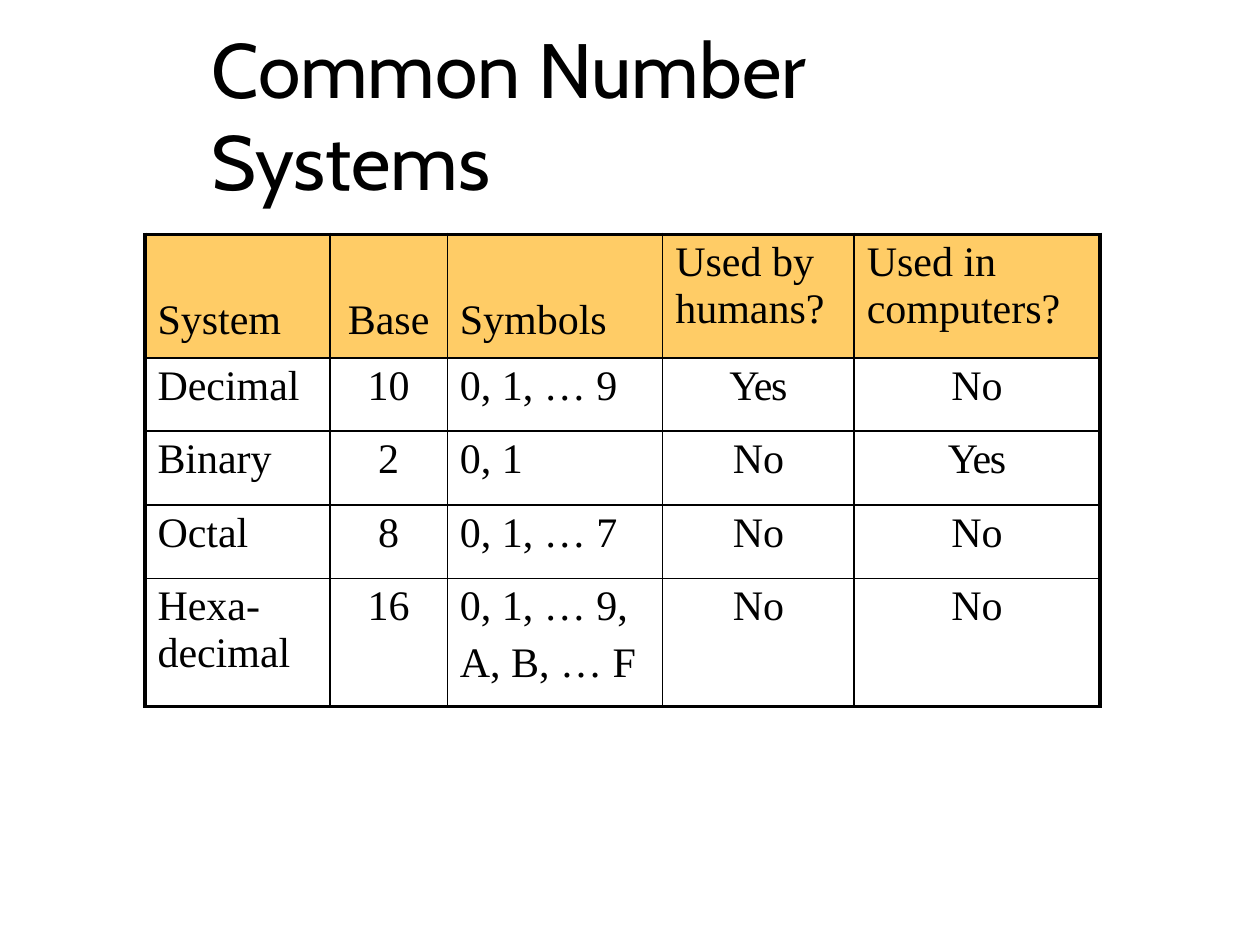
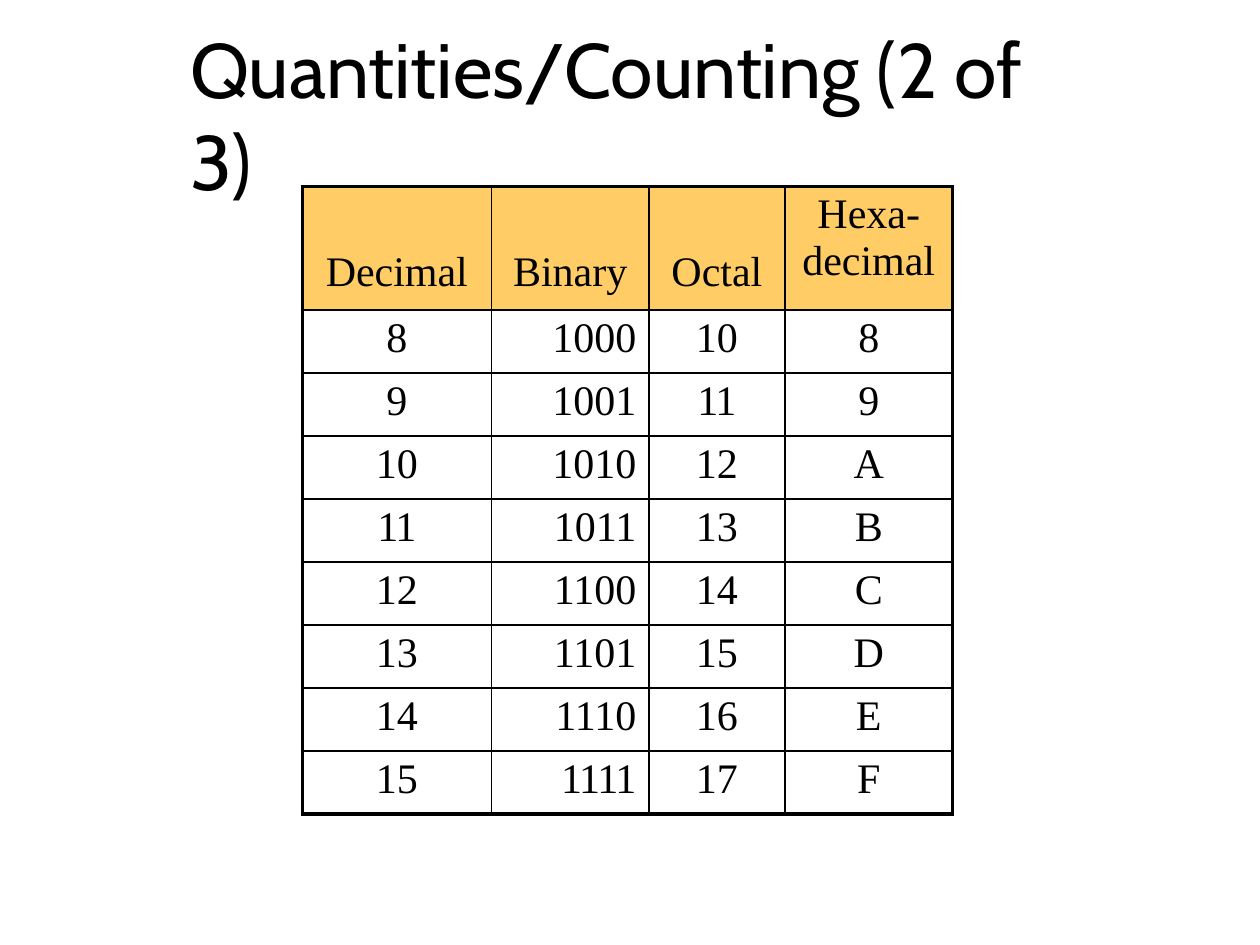
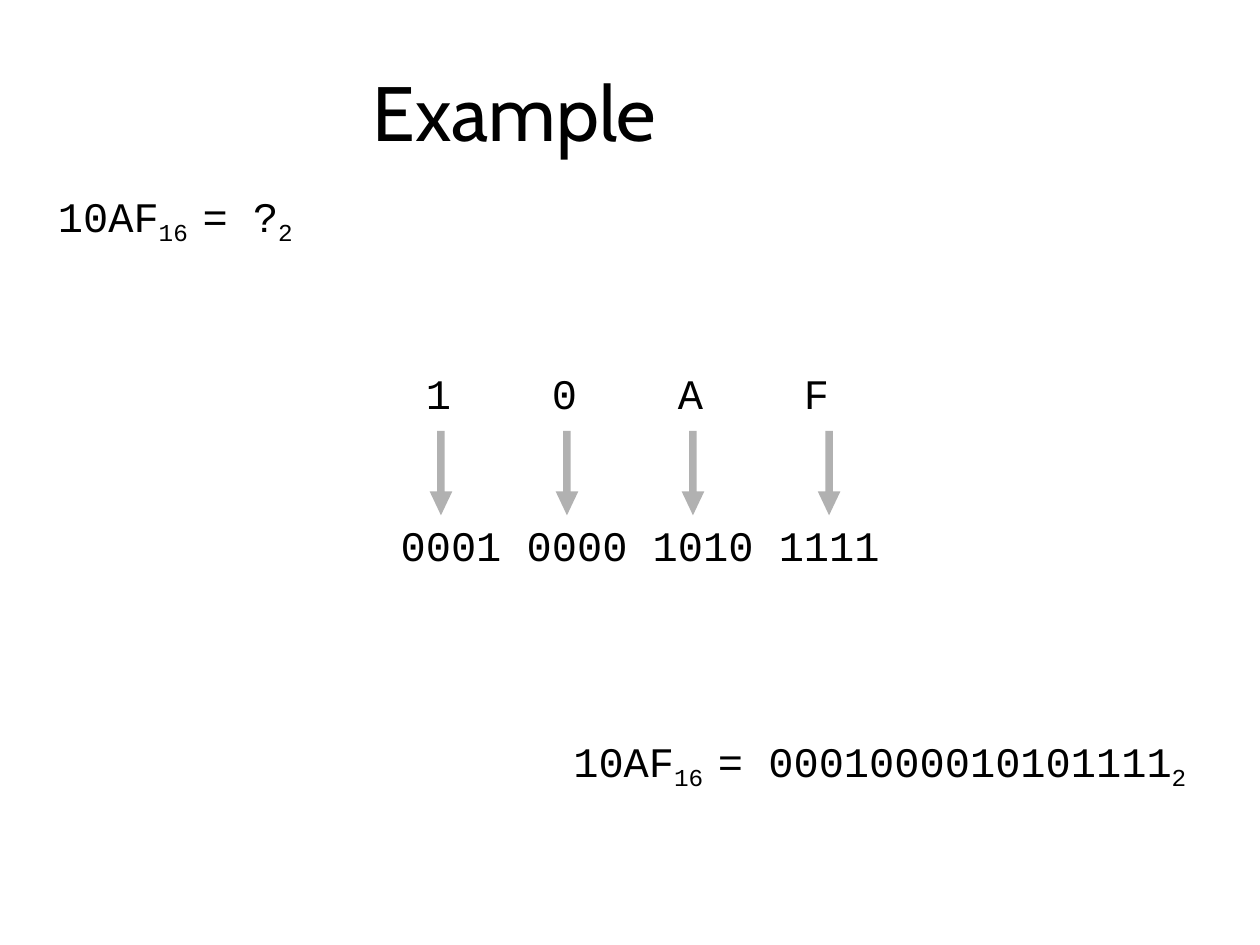
from dataclasses import dataclass

from lxml.etree import SubElement
from pptx import Presentation
from pptx.dml.color import RGBColor
from pptx.enum.text import MSO_ANCHOR, MSO_AUTO_SIZE, PP_ALIGN
from pptx.oxml.ns import qn
from pptx.util import Emu, Pt

PX = 9144  # EMU per px, 100 px to the inch


@dataclass(frozen=True)
class Theme:
    ink: str = "000000"
    header_fill: str = "FFCC66"
    arrow_fill: str = "B1B1B1"
    title_font: str = "Cabin"
    table_font: str = "Times New Roman"
    code_font: str = "Courier New"
    title_size: int = 44
    body_size: int = 24
    outer_border: float = 2.25
    inner_border: float = 1
    paragraph_gap: float = 5.8
    tight_spacing: float = -0.8


THEME = Theme()
ALIGNMENTS = {"l": PP_ALIGN.LEFT, "c": PP_ALIGN.CENTER, "r": PP_ALIGN.RIGHT}
TIGHT_WORDS = {"Yes", "11", "1111"}
CELL_SIDE, CELL_TOP, LOWERED_HEADING_TOP = 10, 4, 50

# Title: text, left, top, width
TABLE_SLIDES = [
    {
        "title": ("Common Number Systems", 167, 16, 665),
        "left": 115, "top": 186,
        "columns": [147, 93, 171, 152, 195],
        "row_heights": [98, 58, 59, 58, 102],
        "header_alignment": "lclll",
        "body_alignment": "lclcc",
        "rows": [
            ("System", "Base", "Symbols", "Used by humans?", "Used in computers?"),
            ("Decimal", "10", "0, 1, … 9", "Yes", "No"),
            ("Binary", "2", "0, 1", "No", "Yes"),
            ("Octal", "8", "0, 1, … 7", "No", "No"),
            ("Hexa- decimal", "16", "0, 1, … 9,\nA, B, … F", "No", "No"),
        ],
    },
    {
        "title": ("Quantities/Counting (2 of 3)", 150, 16, 701),
        "left": 240, "top": 148,
        "columns": [150, 125, 108, 133],
        "row_heights": [98] + [50] * 8,
        "header_alignment": "cccc",
        "body_alignment": "crcc",
        "rows": [("Decimal", "Binary", "Octal", "Hexa- decimal")]
        + [(str(n), f"{n:b}", f"{n:o}", f"{n:X}") for n in range(8, 16)],
    },
]

EXAMPLE_TITLE = ("Example", 295, 50, 307)
HEX_DIGITS = "10AF"
DIGIT_LEFT, DIGIT_STEP, DIGIT_TOP, DIGIT_WIDTH = 337, 100, 291, 23
ARROW_LEFTS, ARROW_TOP = [341, 441, 541, 649], 342
ARROW_OUTLINE = [(6, 0), (12, 0), (12, 48), (18, 48), (9, 67), (0, 48), (6, 48)]
BINARY_GROUPS = ("0001 0000 1010 1111", 317, 411, 383)
# Equation: runs as (text, is subscript), left, top, width
EQUATIONS = [
    ([("10AF", False), ("16 ", True), ("= ?", False), ("2", True)], 40, 150, 211),
    ([("10AF", False), ("16 ", True), ("= 0001000010101111", False), ("2", True)],
     449, 583, 511),
]


def px(length):
    return Emu(length * PX)


def style_run(run, font_name, size):
    run.font.name = font_name
    run.font.size = Pt(size)
    run.font.color.rgb = RGBColor.from_string(THEME.ink)


def set_margins(target, left=0, top=0, right=0):
    target.margin_left, target.margin_top = px(left), px(top)
    target.margin_right, target.margin_bottom = px(right), px(0)


def add_text(slide, runs, left, top, width, font_name=THEME.code_font,
             size=THEME.body_size, inset=1):
    """Add one paragraph made of (text, is subscript) runs."""
    height = 76 if size == THEME.title_size else 43
    text_frame = slide.shapes.add_textbox(px(left), px(top), px(width), px(height)).text_frame
    text_frame.word_wrap = True
    text_frame.auto_size = MSO_AUTO_SIZE.SHAPE_TO_FIT_TEXT
    set_margins(text_frame, left=inset, top=1)
    for text, is_subscript in runs:
        run = text_frame.paragraphs[0].add_run()
        run.text = text
        style_run(run, font_name, size)
        if is_subscript:
            run._r.get_or_add_rPr().set("baseline", "-21000")


def add_title(slide, text, left, top, width):
    add_text(slide, [(text, False)], left, top, width, THEME.title_font, THEME.title_size)


def set_borders(cell, outer_sides):
    properties = cell._tc.get_or_add_tcPr()
    for side in "LRTB":
        width = THEME.outer_border if side in outer_sides else THEME.inner_border
        line = SubElement(properties, qn(f"a:ln{side}"), w=str(Pt(width)))
        fill = SubElement(line, qn("a:solidFill"))
        SubElement(fill, qn("a:srgbClr"), val=THEME.ink)


def fill_cell(cell, text, alignment, is_header):
    is_lowered = is_header and " " not in text
    set_margins(
        cell,
        left=CELL_SIDE if alignment == "l" else 0,
        top=LOWERED_HEADING_TOP if is_lowered else CELL_TOP,
        right=CELL_SIDE if alignment == "r" else 0,
    )
    cell.vertical_anchor = MSO_ANCHOR.TOP
    if is_header:
        cell.fill.solid()
        cell.fill.fore_color.rgb = RGBColor.from_string(THEME.header_fill)
    else:
        cell.fill.background()
    cell.text_frame.text = text
    for index, paragraph in enumerate(cell.text_frame.paragraphs):
        paragraph.alignment = ALIGNMENTS[alignment]
        if index:
            paragraph.space_before = Pt(THEME.paragraph_gap)
        for run in paragraph.runs:
            style_run(run, THEME.table_font, THEME.body_size)
            if text in TIGHT_WORDS:
                run._r.get_or_add_rPr().set("spc", str(round(THEME.tight_spacing * 100)))


def add_number_table(slide, content):
    rows, columns, heights = content["rows"], content["columns"], content["row_heights"]
    table = slide.shapes.add_table(
        len(rows), len(columns), px(content["left"]), px(content["top"]),
        px(sum(columns)), px(sum(heights)),
    ).table
    table.first_row = table.horz_banding = False
    for column, width in zip(table.columns, columns):
        column.width = px(width)
    for row, height in zip(table.rows, heights):
        row.height = px(height)
    last_row, last_column = len(rows) - 1, len(columns) - 1
    for row_index, texts in enumerate(rows):
        is_header = row_index == 0
        alignments = content["header_alignment" if is_header else "body_alignment"]
        for column_index, (text, alignment) in enumerate(zip(texts, alignments)):
            edges = {"L": column_index == 0, "R": column_index == last_column,
                     "T": is_header, "B": row_index == last_row}
            cell = table.cell(row_index, column_index)
            set_borders(cell, [side for side, is_outer in edges.items() if is_outer])
            fill_cell(cell, text, alignment, is_header)


def add_down_arrow(slide, left, top):
    points = [(left + x, top + y) for x, y in ARROW_OUTLINE]
    builder = slide.shapes.build_freeform(*points[0], scale=PX)
    builder.add_line_segments(points[1:], close=True)
    shape = builder.convert_to_shape()
    shape.shadow.inherit = False
    shape.fill.solid()
    shape.fill.fore_color.rgb = RGBColor.from_string(THEME.arrow_fill)
    shape.line.fill.background()


def add_example(slide):
    add_title(slide, *EXAMPLE_TITLE)
    for runs, left, top, width in EQUATIONS:
        add_text(slide, runs, left, top, width, inset=6)
    for index, (digit, arrow_left) in enumerate(zip(HEX_DIGITS, ARROW_LEFTS)):
        add_text(slide, [(digit, False)], DIGIT_LEFT + index * DIGIT_STEP, DIGIT_TOP, DIGIT_WIDTH)
        add_down_arrow(slide, arrow_left, ARROW_TOP)
    groups, *place = BINARY_GROUPS
    add_text(slide, [(groups, False)], *place)


def main():
    presentation = Presentation()
    presentation.slide_width, presentation.slide_height = px(1000), px(750)
    blank_layout = presentation.slide_layouts[6]
    for content in TABLE_SLIDES:
        slide = presentation.slides.add_slide(blank_layout)
        add_title(slide, *content["title"])
        add_number_table(slide, content)
    add_example(presentation.slides.add_slide(blank_layout))
    presentation.save("out.pptx")


if __name__ == "__main__":
    main()
